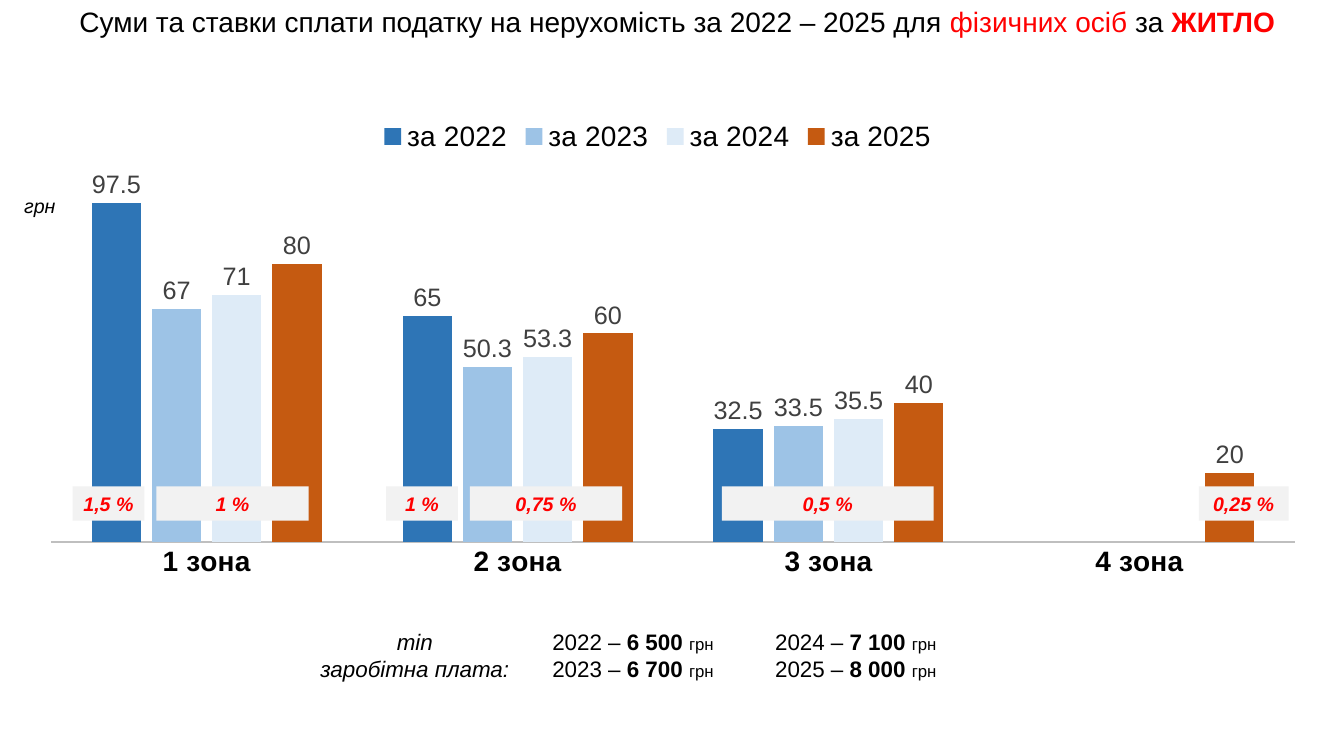
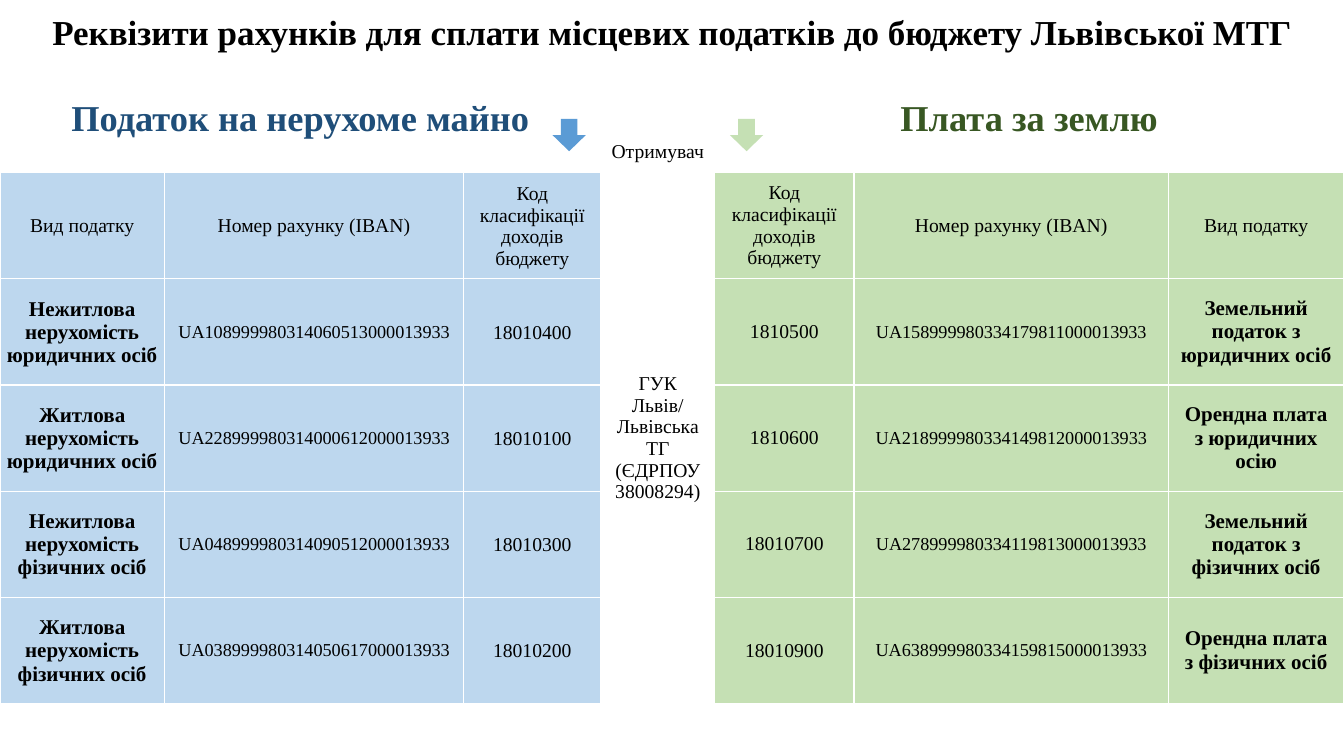
from dataclasses import dataclass

from lxml.etree import SubElement
from pptx import Presentation
from pptx.chart.data import CategoryChartData
from pptx.dml.color import RGBColor
from pptx.enum.chart import XL_CHART_TYPE as ChartType
from pptx.enum.chart import XL_LABEL_POSITION as LabelPosition
from pptx.enum.chart import XL_LEGEND_POSITION as LegendPosition
from pptx.enum.chart import XL_TICK_MARK as TickMark
from pptx.enum.shapes import MSO_SHAPE as Preset
from pptx.enum.text import MSO_ANCHOR as Anchor
from pptx.enum.text import MSO_AUTO_SIZE as AutoSize
from pptx.enum.text import PP_ALIGN as Align
from pptx.oxml import parse_xml
from pptx.oxml.ns import nsdecls, qn
from pptx.util import Inches, Pt

BLACK = RGBColor(0x00, 0x00, 0x00)
WHITE = RGBColor(0xFF, 0xFF, 0xFF)
RED = RGBColor(0xFF, 0x00, 0x00)
TAG_GREY = RGBColor(0xF2, 0xF2, 0xF2)
AXIS_GREY = RGBColor(0xBF, 0xBF, 0xBF)
LABEL_GREY = RGBColor(0x40, 0x40, 0x40)
ARROW_BLUE = RGBColor(0x5B, 0x9B, 0xD5)
PROPERTY_BLUE = RGBColor(0xBD, 0xD7, 0xEE)
PROPERTY_HEADING = RGBColor(0x1F, 0x4E, 0x79)
LAND_GREEN = RGBColor(0xC5, 0xE0, 0xB4)
LAND_HEADING = RGBColor(0x38, 0x57, 0x23)
SANS, SERIF = "Arial", "Times New Roman"

ZONES = ["1 зона", "2 зона", "3 зона", "4 зона"]
YEARS = [
    ("за 2022", [97.5, 65, 32.5, None], RGBColor(0x2E, 0x75, 0xB6)),
    ("за 2023", [67, 50.3, 33.5, None], RGBColor(0x9D, 0xC3, 0xE6)),
    ("за 2024", [71, 53.3, 35.5, None], RGBColor(0xDE, 0xEB, 0xF7)),
    ("за 2025", [80, 60, 40, 20], RGBColor(0xC5, 0x5A, 0x11)),
]
# Text, left and width in percent of the chart's width
RATES = [
    ("1,5 %", 3.66, 5.53), ("1 %", 10.12, 11.75),
    ("1 %", 27.86, 5.53), ("0,75 %", 34.32, 11.75),
    ("0,5 %", 53.77, 16.34), ("0,25 %", 90.58, 6.93),
]
WAGES = [
    [("2022", "6 500"), ("2023", "6 700")],
    [("2024", "7 100"), ("2025", "8 000")],
]

KIND, IBAN, CODE = "Вид податку", "Номер рахунку (IBAN)", "Код класифікації доходів бюджету"
PROPERTY_ACCOUNTS = [
    ("Нежитлова нерухомість юридичних осіб", "UA108999980314060513000013933", "18010400"),
    ("Житлова нерухомість юридичних осіб", "UA228999980314000612000013933", "18010100"),
    ("Нежитлова нерухомість фізичних осіб", "UA048999980314090512000013933", "18010300"),
    ("Житлова нерухомість фізичних осіб", "UA038999980314050617000013933", "18010200"),
]
LAND_ACCOUNTS = [
    ("Земельний податок з юридичних осіб", "UA158999980334179811000013933", "1810500"),
    ("Орендна плата з юридичних осію", "UA218999980334149812000013933", "1810600"),
    ("Земельний податок з фізичних осіб", "UA278999980334119813000013933", "18010700"),
    ("Орендна плата з фізичних осіб", "UA638999980334159815000013933", "18010900"),
]
COLUMN_WIDTHS = [1.63, 2.97, 1.36, 1.13, 1.38, 3.12, 1.74]
TITLE_ROW = 0.66


@dataclass
class Box:
    left: float
    top: float
    width: float
    height: float

    def share(self, left, top, width, height):
        """Return an inner box given in percent of this one."""
        return Box(self.left + self.width * left / 100, self.top + self.height * top / 100,
                   self.width * width / 100, self.height * height / 100)

    def emu(self):
        return [Inches(length) for length in (self.left, self.top, self.width, self.height)]


SLIDE = Box(0, 0, 13.33, 7.5)


def format_font(font, size, color=BLACK, name=SANS, bold=False, italic=False):
    font.size, font.name, font.bold, font.italic = Pt(size), name, bold, italic
    font.color.rgb = color


def write_text(frame, paragraphs, align=Align.CENTER, spacing=None, **style):
    """Fill a frame; each paragraph is a string or a list of (text, overrides)."""
    for index, content in enumerate(paragraphs):
        paragraph = frame.add_paragraph() if index else frame.paragraphs[0]
        paragraph.alignment = align
        if spacing:
            paragraph.line_spacing = spacing
        runs = [(content, {})] if isinstance(content, str) else content
        for text, overrides in runs:
            run = paragraph.add_run()
            run.text = text
            format_font(run.font, **{**style, **overrides})


def add_text(slide, box, paragraphs, **style):
    frame = slide.shapes.add_textbox(*box.emu()).text_frame
    frame.word_wrap = True
    frame.auto_size = AutoSize.SHAPE_TO_FIT_TEXT
    write_text(frame, paragraphs, **style)


def add_filled_shape(slide, preset, box, color):
    shape = slide.shapes.add_shape(preset, *box.emu())
    shape.shadow.inherit = False
    shape.fill.solid()
    shape.fill.fore_color.rgb = color
    shape.line.fill.background()
    return shape


def set_layout(element, **shares):
    """Fix a plot area or legend at shares of the chart."""
    for old in element.findall(qn("c:layout")):
        element.remove(old)
    layout = parse_xml(f"<c:layout {nsdecls('c')}><c:manualLayout/></c:layout>")
    manual = layout[0]
    if "w" in shares:
        SubElement(manual, qn("c:layoutTarget")).set("val", "inner")
    for axis in "xy":
        SubElement(manual, qn(f"c:{axis}Mode")).set("val", "edge")
    for key, share in shares.items():
        SubElement(manual, qn(f"c:{key}")).set("val", str(share))
    position = element.find(qn("c:legendPos"))
    if position is None:
        element.insert(0, layout)
    else:
        position.addnext(layout)


def place_title(slide, box):
    title = slide.shapes.title
    title.left, title.top, title.width, title.height = box.emu()
    frame = title.text_frame
    frame.word_wrap = True
    frame.auto_size = AutoSize.NONE
    frame.vertical_anchor = Anchor.MIDDLE
    write_text(frame, [[
        ("Суми та ставки сплати податку на нерухомість за 2022 – 2025 для ", {}),
        ("фізичних осіб ", {"color": RED}),
        ("за ", {}),
        ("ЖИТЛО", {"color": RED, "bold": True}),
    ]], size=20, spacing=0.9)


def place_tax_chart(slide, box):
    data = CategoryChartData()
    data.categories = ZONES
    for name, values, _ in YEARS:
        data.add_series(name, values)
    chart = slide.shapes.add_chart(ChartType.COLUMN_CLUSTERED, *box.emu(), data).chart
    chart.has_title = False
    format_font(chart.font, 10, name="Calibri")

    chart.has_legend = True
    chart.legend.position = LegendPosition.TOP
    chart.legend.include_in_layout = False
    format_font(chart.legend.font, 20)

    zone_axis, amount_axis = chart.category_axis, chart.value_axis
    zone_axis.major_tick_mark = TickMark.NONE
    zone_axis.format.line.color.rgb = AXIS_GREY
    zone_axis.format.line.width = Pt(1.5)
    format_font(zone_axis.tick_labels.font, 20, bold=True)
    amount_axis.minimum_scale, amount_axis.maximum_scale = 0, 100
    amount_axis.has_major_gridlines = False
    amount_axis.visible = False

    plot = chart.plots[0]
    plot.gap_width, plot.overlap = 164, -22
    plot.vary_by_categories = False
    for series, (_, _, color) in zip(plot.series, YEARS):
        series.format.fill.solid()
        series.format.fill.fore_color.rgb = color
        labels = series.data_labels
        labels.show_value = True
        labels.position = LabelPosition.OUTSIDE_END
        format_font(labels.font, 18, LABEL_GREY)

    set_layout(plot._element.getparent(), x=0.02, y=0.25, w=0.96, h=0.66)
    set_layout(chart.legend._element, x=0.27, y=0.1)

    for text, left, width in RATES:
        tag = add_filled_shape(slide, Preset.RECTANGLE, box.share(left, 80.4, width, 6.5), TAG_GREY)
        write_text(tag.text_frame, [text], size=14, color=RED, bold=True, italic=True)
    add_text(slide, box.share(-1.87, 23.9, 6, 6.5), ["грн"], size=14, italic=True)


def place_wages(slide, box):
    add_text(slide, box.share(0, 0, 40.26, 100), ["min", "заробітна плата:"], size=16, italic=True)
    for left, wages in zip((38.52, 70.64), WAGES):
        lines = [[(f"{year} –", {}), (f" {wage} ", {"bold": True}), ("грн", {"size": 12})]
                 for year, wage in wages]
        add_text(slide, box.share(left, 0, 29.36, 100), lines, size=16, align=Align.LEFT)


def set_borders(cell, color=WHITE, width=1):
    properties = cell._tc.get_or_add_tcPr()
    for side in "LRTB":
        properties.append(parse_xml(
            f'<a:ln{side} {nsdecls("a")} w="{Pt(width)}"><a:solidFill>'
            f'<a:srgbClr val="{color}"/></a:solidFill></a:ln{side}>'))


def fill_cell(cell, paragraphs, fill=None, size=14, **style):
    cell.vertical_anchor = Anchor.MIDDLE
    if fill is not None:
        cell.fill.solid()
        cell.fill.fore_color.rgb = fill
    write_text(cell.text_frame, paragraphs, size=size, name=SERIF, **style)


def fill_accounts(table, accounts, columns, fill, tight=False):
    """Write one tax's header and accounts below it; columns are kind, IBAN, code."""
    styles = [{"size": 15, "bold": True}, {"size": 13}, {}]
    for row, texts in enumerate([(KIND, IBAN, CODE)] + accounts, start=2):
        for column, text, style in zip(columns, texts, styles):
            cell = table.cell(row, column)
            if tight:
                cell.margin_left = cell.margin_right = cell.margin_top = Inches(0.01)
                cell.margin_bottom = 0
            fill_cell(cell, [text], fill, **({} if row == 2 else style))


def place_accounts_table(slide, box):
    row_count = 3 + len(PROPERTY_ACCOUNTS)
    table = slide.shapes.add_table(row_count, len(COLUMN_WIDTHS), *box.emu()).table
    table.first_row = table.horz_banding = False
    for column, width in zip(table.columns, COLUMN_WIDTHS):
        column.width = Inches(width)
    for index, row in enumerate(table.rows):
        row.height = Inches((box.height - TITLE_ROW) / (row_count - 1) if index else TITLE_ROW)
    for cell in table.iter_cells():
        set_borders(cell)
        cell.fill.background()
    for first, last in [((0, 0), (0, 6)), ((1, 0), (1, 2)), ((1, 4), (1, 6)), ((2, 3), (6, 3))]:
        table.cell(*first).merge(table.cell(*last))

    fill_cell(table.cell(0, 0),
              ["Реквізити рахунків для сплати місцевих податків до бюджету Львівської МТГ"],
              size=25, bold=True)
    for column, heading, color in [(0, "Податок на нерухоме майно", PROPERTY_HEADING),
                                   (4, "Плата за землю", LAND_HEADING)]:
        fill_cell(table.cell(1, column), [heading], size=26, color=color, bold=True)
    recipient = table.cell(1, 3)
    fill_cell(recipient, ["Отримувач"])
    recipient.vertical_anchor = Anchor.BOTTOM
    recipient.margin_bottom = Inches(0.1)
    fill_cell(table.cell(2, 3), ["ГУК Львiв/", "Львівська ТГ (ЄДРПОУ 38008294)"])
    fill_accounts(table, PROPERTY_ACCOUNTS, (0, 1, 2), PROPERTY_BLUE, tight=True)
    fill_accounts(table, LAND_ACCOUNTS, (6, 5, 4), LAND_GREEN)


def build_rates_slide(presentation):
    slide = presentation.slides.add_slide(presentation.slide_layouts[5])
    place_title(slide, SLIDE.share(2.48, 0, 95.8, 6.13))
    place_tax_chart(slide, SLIDE.share(1.88, 8.27, 96.4, 69.73))
    place_wages(slide, SLIDE.share(20.48, 82.4, 51.6, 8.53))


def build_accounts_slide(presentation):
    slide = presentation.slides.add_slide(presentation.slide_layouts[6])
    place_accounts_table(slide, SLIDE.share(0, 0, 100, 93.07))
    for left, color in [(41.11, ARROW_BLUE), (54.31, LAND_GREEN)]:
        add_filled_shape(slide, Preset.DOWN_ARROW, SLIDE.share(left, 15.73, 2.48, 4.27), color)


def main():
    presentation = Presentation()
    presentation.slide_width = Inches(SLIDE.width)
    presentation.slide_height = Inches(SLIDE.height)
    build_rates_slide(presentation)
    build_accounts_slide(presentation)
    presentation.save("out.pptx")


if __name__ == "__main__":
    main()
